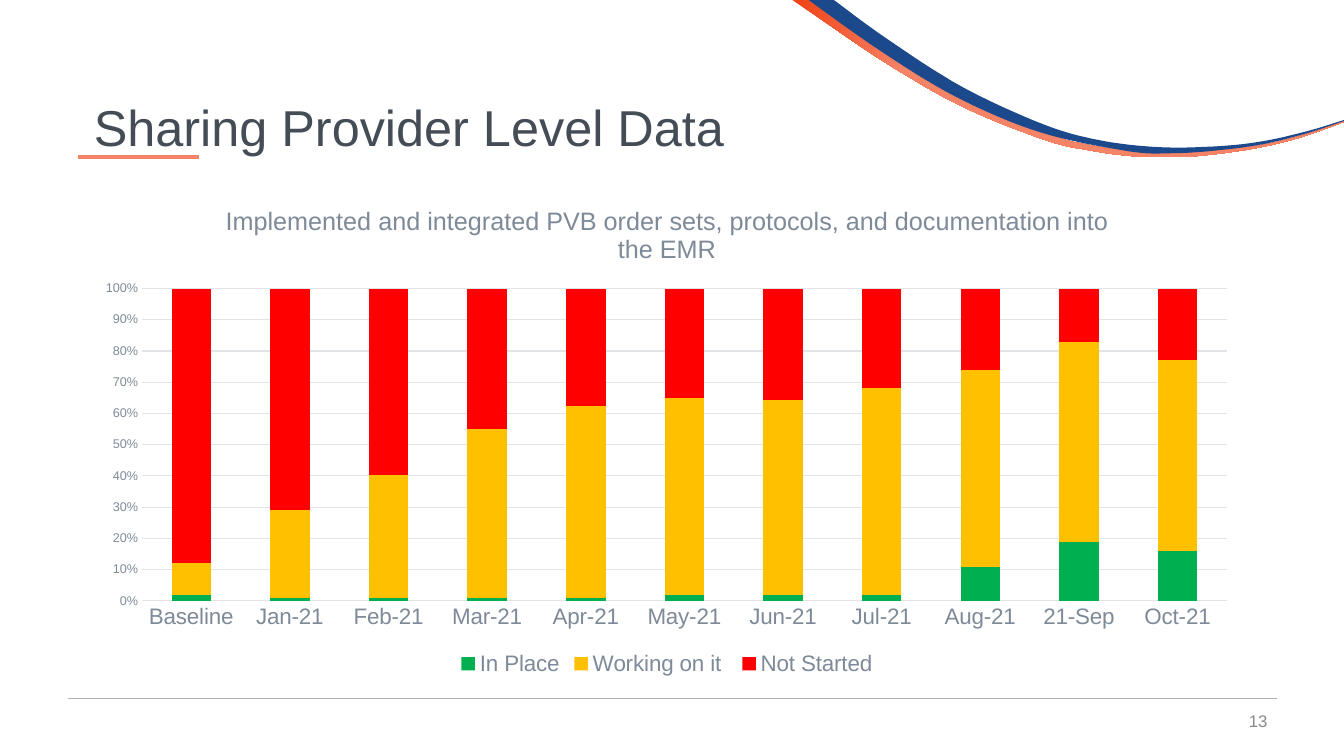
from lxml import etree
from pptx import Presentation
from pptx.chart.data import CategoryChartData
from pptx.dml.color import RGBColor
from pptx.enum.chart import XL_CHART_TYPE, XL_LEGEND_POSITION, XL_TICK_MARK
from pptx.enum.shapes import MSO_CONNECTOR
from pptx.enum.text import MSO_ANCHOR, PP_ALIGN
from pptx.oxml.ns import qn
from pptx.util import Inches, Pt

STACKED = XL_CHART_TYPE.COLUMN_STACKED_100
BOTTOM = XL_LEGEND_POSITION.BOTTOM
NO_TICK = XL_TICK_MARK.NONE
STRAIGHT = MSO_CONNECTOR.STRAIGHT
MIDDLE = MSO_ANCHOR.MIDDLE
LEFT, CENTER, RIGHT = PP_ALIGN.LEFT, PP_ALIGN.CENTER, PP_ALIGN.RIGHT

FONT = "Arial"
DARK, GRAY, GRID = "444C55", "7E8A98", "E1E4E7"
ORANGE, CORAL, BLUE = "F04115", "F58366", "1C498B"
rgb = RGBColor.from_string


def style(font, size, color):
    font.name, font.size, font.bold = FONT, Pt(size), False
    font.color.rgb = rgb(color)


def write(tf, text, size=18, color=DARK, align=LEFT, spacing=None):
    p = tf.paragraphs[0]
    p.alignment = align
    if spacing:
        p.line_spacing = spacing
    r = p.add_run()
    r.text = text
    style(r.font, size, color)


prs = Presentation()
prs.slide_width, prs.slide_height = Inches(13.33), Inches(7.5)
s = prs.slides.add_slide(prs.slide_layouts[5])

# Ribbons in the top right corner: points along each edge, joined smoothly
ribbons = [
    (CORAL,
     [(8.05, 0), (8.82, 0.54), (9.58, 0.99), (10.39, 1.33), (10.81, 1.44), (11.25, 1.5),
      (11.68, 1.52), (12.12, 1.49), (12.56, 1.43), (12.99, 1.32), (13.33, 1.2)],
     [(13.33, 1.21), (12.94, 1.35), (12.56, 1.45), (12.13, 1.52), (11.69, 1.56),
      (11.24, 1.55), (10.8, 1.49), (10.37, 1.39), (9.55, 1.06), (8.78, 0.62),
      (8.04, 0.12), (7.86, 0)]),
    (BLUE,
     [(8.27, 0), (8.79, 0.38), (9.54, 0.86), (10.34, 1.23), (10.9, 1.39), (11.5, 1.46),
      (12.09, 1.45), (12.53, 1.4), (12.97, 1.3), (13.33, 1.19)],
     [(13.33, 1.2), (12.97, 1.32), (12.53, 1.43), (12.09, 1.49), (11.64, 1.52),
      (11.19, 1.5), (10.31, 1.31), (9.48, 0.96), (8.71, 0.49), (8.02, 0)]),
]
STEPS = 8
UNITS = 1000  # freeform points are whole numbers, so count in thousandths of an inch
for color, upper, lower in ribbons:
    outline = []
    for edge in (upper, lower):
        padded = [edge[0]] + edge + [edge[-1]]
        for a, b, c, d in zip(padded, padded[1:], padded[2:], padded[3:]):
            for i in range(STEPS):
                t = i / STEPS
                outline.append(tuple(
                    UNITS * (b[k] + 0.5 * t * (c[k] - a[k]
                    + t * (2 * a[k] - 5 * b[k] + 4 * c[k] - d[k])
                    + t * t * (3 * b[k] - a[k] - 3 * c[k] + d[k])))
                    for k in (0, 1)))
        outline.append(tuple(UNITS * v for v in edge[-1]))
    builder = s.shapes.build_freeform(*outline[0], scale=Inches(1) / UNITS)
    builder.add_line_segments(outline[1:], close=True)
    sp = builder.convert_to_shape()
    sp.shadow.inherit = False
    sp.line.fill.background()
    if color == CORAL:
        sp.fill.gradient()
        sp.fill.gradient_angle = 0
        for stop, pos, hue in zip(sp.fill.gradient_stops, (0, 0.2), (ORANGE, CORAL)):
            stop.position = pos
            stop.color.rgb = rgb(hue)
    else:
        sp.fill.solid()
        sp.fill.fore_color.rgb = rgb(color)

# Footer rule and title accent
for x1, x2, y, color, width in [(0.67, 12.67, 6.93, "AFB3B9", 0.5),
                                (0.77, 1.97, 1.56, CORAL, 2.5)]:
    line = s.shapes.add_connector(STRAIGHT, Inches(x1), Inches(y), Inches(x2), Inches(y))
    line.line.color.rgb = rgb(color)
    line.line.width = Pt(width)
    etree.SubElement(line._element.spPr, qn("a:effectLst"))

# Title
title = s.shapes.title
title.left, title.top = Inches(0.83), Inches(0.57)
title.width, title.height = Inches(12), Inches(1.45)
title.text_frame.vertical_anchor = MIDDLE
write(title.text_frame, "Sharing Provider Level Data", size=36, spacing=0.9)

# Page number
number = s.shapes.add_textbox(Inches(9.67), Inches(6.95), Inches(3), Inches(0.4))
number.text_frame.word_wrap = True
number.text_frame.vertical_anchor = MIDDLE
write(number.text_frame, "13", size=12, color="898989", align=RIGHT)

# Chart data
data = CategoryChartData(number_format="0")
data.categories = ["Baseline", "Jan-21", "Feb-21", "Mar-21", "Apr-21", "May-21",
                   "Jun-21", "Jul-21", "Aug-21", "21-Sep", "Oct-21"]
statuses = [
    ("In Place", "00B050", [2, 1, 1, 1, 1, 2, 2, 2, 11, 19, 16]),
    ("Working on it ", "FFC000", [10, 28, 39, 54, 62, 63, 63, 67, 63, 64, 61]),
    ("Not Started", "FF0000", [88, 71, 59, 45, 38, 35, 36, 32, 26, 17, 23]),
]
for name, _, values in statuses:
    data.add_series(name, values)

# Chart
chart = s.shapes.add_chart(STACKED, Inches(0.83), Inches(1.83),
                           Inches(11.57), Inches(4.92), data).chart
style(chart.font, 10, DARK)
chart.has_title = True
write(chart.chart_title.text_frame,
      "Implemented and integrated PVB order sets, protocols, and documentation into the EMR",
      size=18, color=GRAY, align=CENTER)
chart.chart_title.include_in_layout = False

plot = chart.plots[0]
plot.gap_width, plot.overlap = 150, 100
plot.vary_by_categories = False
for series, (_, color, _) in zip(plot.series, statuses):
    series.format.fill.solid()
    series.format.fill.fore_color.rgb = rgb(color)

cat_axis, val_axis = chart.category_axis, chart.value_axis
for axis, size in [(cat_axis, 16), (val_axis, 9)]:
    axis.major_tick_mark = axis.minor_tick_mark = NO_TICK
    style(axis.tick_labels.font, size, GRAY)
val_axis.maximum_scale, val_axis.minimum_scale, val_axis.major_unit = 1, 0, 0.1
val_axis.tick_labels.number_format = "0%"
val_axis.tick_labels.number_format_is_linked = False
val_axis.format.line.fill.background()
val_axis.has_major_gridlines = True
for rule in (cat_axis.format.line, val_axis.major_gridlines.format.line):
    rule.color.rgb = rgb(GRID)
    rule.width = Pt(0.75)

chart.has_legend = True
chart.legend.position = BOTTOM
chart.legend.include_in_layout = False
style(chart.legend.font, 16, GRAY)

# Fixed place of the plot area, as shares of the chart
plot_area = chart._chartSpace.chart.plotArea
for old in plot_area.findall(qn("c:layout")):
    plot_area.remove(old)
layout = etree.Element(qn("c:layout"))
plot_area.insert(0, layout)
manual = etree.SubElement(layout, qn("c:manualLayout"))
for tag, val in [("layoutTarget", "inner"), ("xMode", "edge"), ("yMode", "edge"),
                 ("x", 0.05), ("y", 0.21), ("w", 0.93), ("h", 0.63)]:
    etree.SubElement(manual, qn("c:" + tag)).set("val", str(val))

prs.save("out.pptx")
